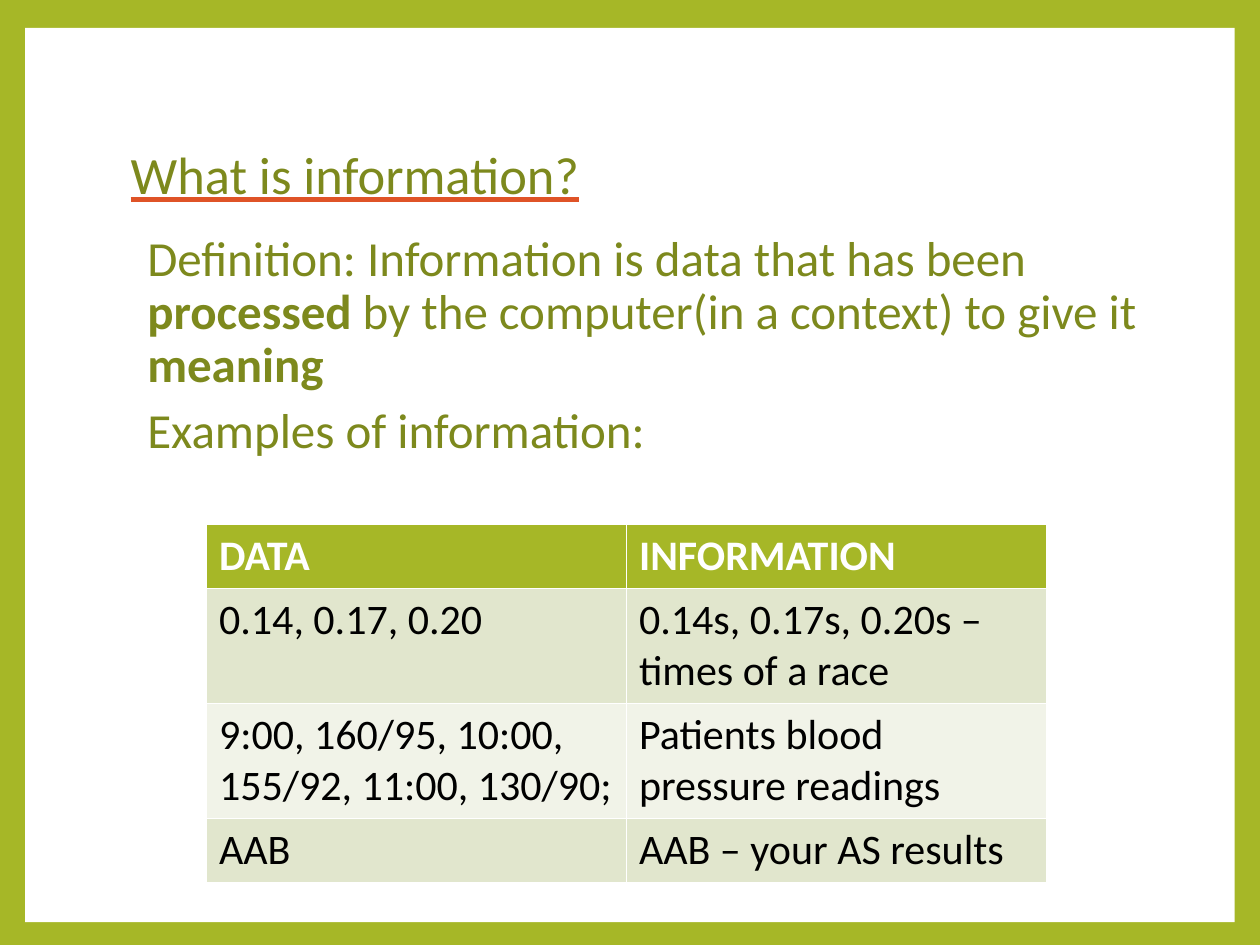
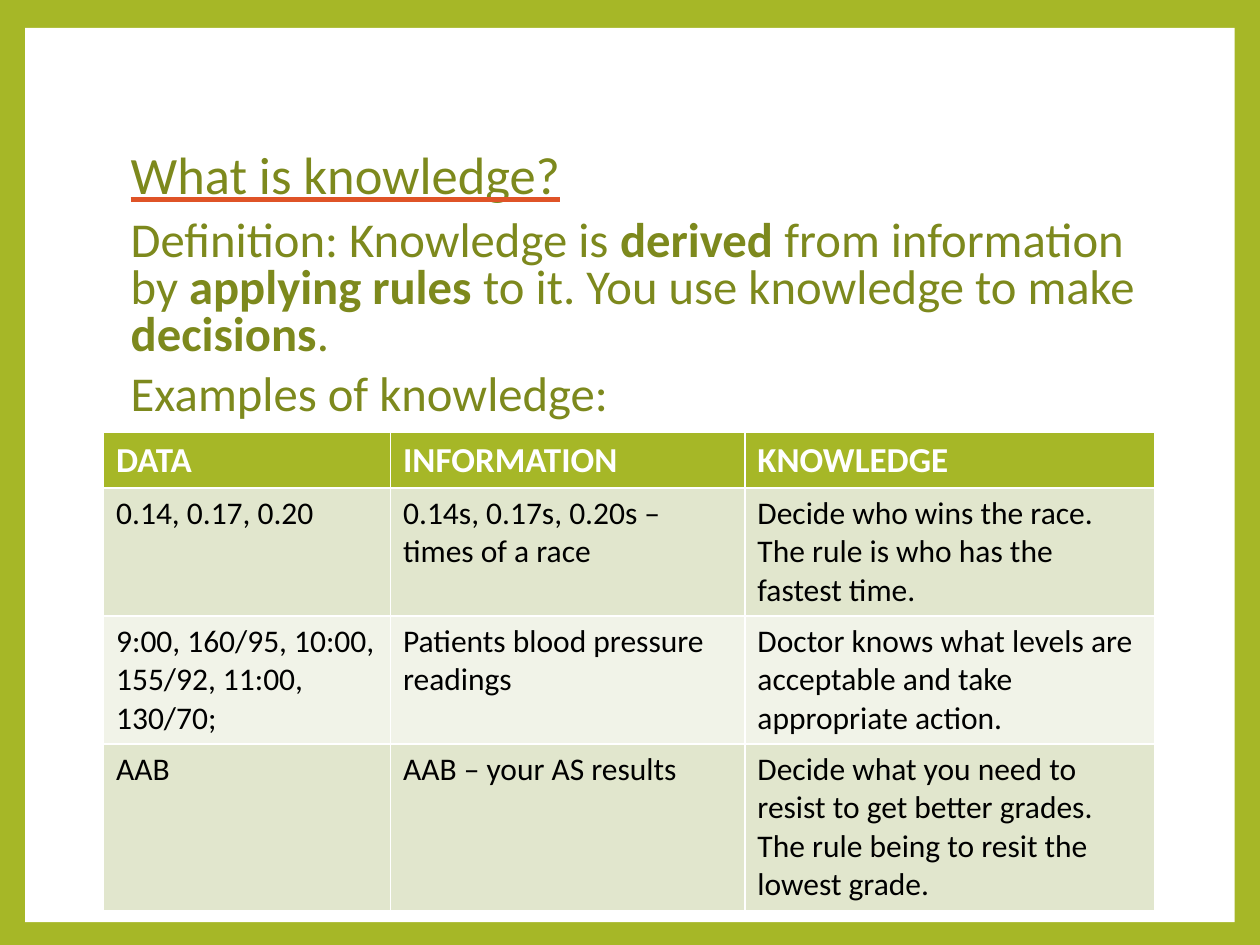
from lxml.etree import SubElement
from pptx import Presentation
from pptx.dml.color import RGBColor
from pptx.enum.shapes import MSO_SHAPE
from pptx.enum.text import MSO_ANCHOR, MSO_AUTO_SIZE, PP_ALIGN
from pptx.oxml.ns import qn
from pptx.util import Pt

FONT = "Calibri"
LIME = RGBColor(0xA6, 0xB7, 0x27)
OLIVE = RGBColor(0x7D, 0x89, 0x1D)
ORANGE = RGBColor(0xDF, 0x53, 0x27)
WHITE = RGBColor(0xFF, 0xFF, 0xFF)
BLACK = RGBColor(0, 0, 0)
BANDS = [RGBColor(0xE1, 0xE6, 0xCD), RGBColor(0xF1, 0xF3, 0xE8)]

SLIDES = [
    {
        "title": "What is information?",
        "body_box": (77, 130.3, 607, 203),
        "body_size": 28,
        "spacing": 0.9,
        # Asterisks enclose bold words
        "body": [
            "Definition: Information is data that has been *processed* by the "
            "computer(in a context) to give it *meaning*",
            "Examples of information:",
        ],
        "table_at": (118, 299.7),
        "columns": [240, 240],
        "head_size": 24,
        "cell_size": 24,
        "rows": [
            ["DATA", "INFORMATION"],
            ["0.14, 0.17, 0.20", "0.14s, 0.17s, 0.20s – times of a race"],
            ["9:00, 160/95, 10:00, 155/92, 11:00, 130/90;",
             "Patients blood pressure readings"],
            ["AAB", "AAB – your AS results"],
        ],
    },
    {
        "title": "What is knowledge?",
        "body_box": (67.5, 122.4, 607, 122.4),
        "body_size": 27.8,
        "spacing": 0.8,
        "body": [
            "Definition: Knowledge is *derived* from information by "
            "*applying rules *to it. You use knowledge to make *decisions*.",
            "Examples of knowledge:",
        ],
        "table_at": (59.2, 247.2),
        "columns": [164, 202.5, 234.5],
        "head_size": 20,
        "cell_size": 18,
        "rows": [
            ["DATA", "INFORMATION", "KNOWLEDGE"],
            ["0.14, 0.17, 0.20", "0.14s, 0.17s, 0.20s – times of a race",
             "Decide who wins the race. The rule is who has the fastest time."],
            ["9:00, 160/95, 10:00, 155/92, 11:00, 130/70;",
             "Patients blood pressure readings",
             "Doctor knows what levels are acceptable and take appropriate action."],
            ["AAB", "AAB – your AS results",
             "Decide what you need to resist to get better grades. "
             "The rule being to resit the lowest grade."],
        ],
    },
]


def add_text(p, text, size=18, color=BLACK, bold=False, underline=None):
    r = p.add_run()
    r.text = text
    r.font.size = Pt(size)
    r.font.bold = bold
    r.font.color.rgb = color
    if underline is not None:
        r.font.underline = True
        u_fill = SubElement(r.font._element, qn("a:uFill"))
        solid = SubElement(u_fill, qn("a:solidFill"))
        SubElement(solid, qn("a:srgbClr"), val=str(underline))
    r.font.name = FONT


def place(sp, left, top, width, height):
    sp.left, sp.top, sp.width, sp.height = Pt(left), Pt(top), Pt(width), Pt(height)
    sp.text_frame.word_wrap = True
    sp.text_frame.auto_size = MSO_AUTO_SIZE.NONE


prs = Presentation()
prs.slide_width, prs.slide_height = Pt(720), Pt(540)

# Green border colour for every slide
fill = prs.slide_master.background.fill
fill.solid()
fill.fore_color.rgb = LIME

for content in SLIDES:
    s = prs.slides.add_slide(prs.slide_layouts[1])

    # White panel behind everything
    panel = s.shapes.add_shape(MSO_SHAPE.RECTANGLE, Pt(14.4), Pt(16), Pt(691.2), Pt(511))
    panel.shadow.inherit = False
    panel.fill.solid()
    panel.fill.fore_color.rgb = WHITE
    panel.line.fill.background()
    s.shapes._spTree.insert(2, panel._element)

    # Title
    title = s.shapes.title
    place(title, 67.5, 48.2, 583, 106.6)
    title.text_frame.vertical_anchor = MSO_ANCHOR.MIDDLE
    p = title.text_frame.paragraphs[0]
    p.alignment = PP_ALIGN.LEFT
    p.line_spacing = 0.9
    add_text(p, content["title"], size=30, color=OLIVE, underline=ORANGE)

    # Definition
    body = s.placeholders[1]
    place(body, *content["body_box"])
    tf = body.text_frame
    for i, line in enumerate(content["body"]):
        p = tf.add_paragraph() if i else tf.paragraphs[0]
        p.line_spacing = content["spacing"]
        p.space_before = Pt(7.5 if i else 0)
        pPr = p._p.get_or_add_pPr()
        pPr.set("marL", "0")
        pPr.set("indent", "0")
        SubElement(pPr, qn("a:buNone"))
        for j, part in enumerate(line.split("*")):
            if part:
                add_text(p, part, size=content["body_size"], color=OLIVE, bold=j % 2 == 1)

    # Examples table
    rows, columns = content["rows"], content["columns"]
    left, top = content["table_at"]
    table = s.shapes.add_table(len(rows), len(columns), Pt(left), Pt(top),
                               Pt(sum(columns)), Pt(29.5 * len(rows))).table
    for column, width in zip(table.columns, columns):
        column.width = Pt(width)
    for i, row in enumerate(rows):
        for j, text in enumerate(row):
            cell = table.cell(i, j)
            cell.fill.solid()
            cell.fill.fore_color.rgb = BANDS[(i - 1) % 2] if i else LIME
            add_text(cell.text_frame.paragraphs[0], text,
                     size=content["cell_size"] if i else content["head_size"],
                     color=BLACK if i else WHITE, bold=i == 0)

prs.save("out.pptx")
